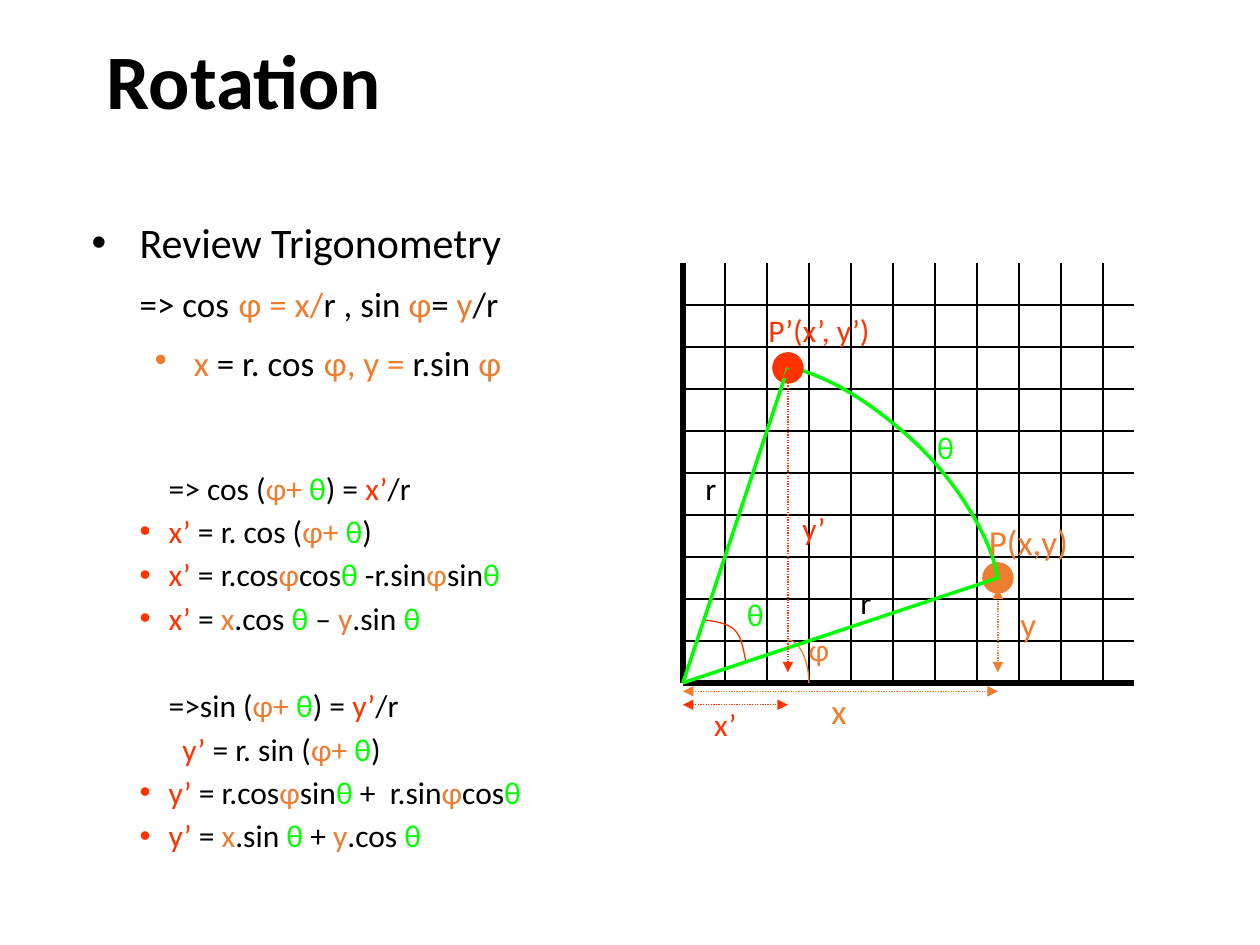
from pptx import Presentation
from pptx.dml.color import RGBColor
from pptx.enum.dml import MSO_LINE
from pptx.enum.shapes import MSO_CONNECTOR, MSO_SHAPE
from pptx.enum.text import MSO_ANCHOR
from pptx.oxml.ns import qn
from pptx.util import Inches, Pt
from lxml.etree import SubElement

THEME = {
    "font": "Calibri",
    "black": "000000", "orange": "ED7D31", "green": "00FF00", "red": "FF3300",
    "title": 44, "head": 24, "body": 20, "small": 18,
    "thin": 0.75, "bold": 2, "axis": 3,
}

PHI, THETA = ("orange", "φ"), ("green", "θ")
X, Y = ("orange", "x"), ("orange", "y")
NEWX, NEWY = ("red", "x’"), ("red", "y’")
SUM = [("orange", "φ+ "), THETA]
GAP = ("black", " ", "head")


def ink(text):
    return ("black", text)


TITLE = [(0, 0, False, 0, [ink("Rotation")])]
REVIEW = [
    (0.38, -0.38, True, 4.8, [("black", "Review Trigonometry", "head")]),
    (0.38, 0, False, 4.8, [ink("=> cos"), GAP, ("orange", "φ = x/"), ink("r , sin "),
                           PHI, ink("= "), Y, ink("/r")]),
    (0.81, -0.31, True, 4.8, [X, ink(" = r. cos"), GAP, ("orange", "φ, y = "),
                              ink("r.sin "), PHI]),
]
PROOF = [
    (0.5, 0, False, 3.2, [ink("=> cos ("), *SUM, ink(") = "), NEWX, ink("/r")]),
    (0.5, -0.23, True, 3.2, [NEWX, ink(" = r. cos ("), *SUM, ink(")")]),
    (0.5, -0.23, True, 3.2, [NEWX, ink(" = r.cos"), PHI, ink("cos"), THETA,
                             ink(" -r.sin"), PHI, ink("sin"), THETA]),
    (0.5, -0.23, True, 3.2, [("red", "x’ "), ink("= "), X, ink(".cos "), THETA,
                             ink(" – "), Y, ink(".sin "), THETA]),
    (0.5, 0, False, 28.3, [ink("=>sin ("), *SUM, ink(") = "), NEWY, ink("/r")]),
    (0.61, 0, False, 3.2, [NEWY, ink(" = r. sin ("), *SUM, ink(")")]),
    (0.5, -0.23, True, 3.2, [NEWY, ink(" = r.cos"), PHI, ink("sin"), THETA,
                             ink(" +  r.sin"), PHI, ink("cos"), THETA]),
    (0.5, -0.23, True, 3.2, [("red", "y’ "), ink("= "), X, ink(".sin "), THETA,
                             ink(" + "), Y, ink(".cos "), THETA]),
]
BLOCKS = [
    (0.75, 0, 8.5, 1.25, "title", TITLE),
    (0.63, 1.67, 4.83, 1.75, "body", REVIEW),
    (0.74, 3.67, 4.63, 3.4, "small", PROOF),
]
LABELS = [
    (7.34, 3.35, 0.33, "small", THETA),
    (6.32, 4.95, 0.46, "small", PHI),
    (7.75, 4.08, 0.9, "body", ("orange", "P(x,y)")),
    (6.5, 5.42, 0.34, "body", X),
    (8, 4.73, 0.34, "body", Y),
    (6.73, 4.58, 0.35, "small", ink("r")),
    (5.57, 5.55, 0.41, "small", NEWX),
    (6.27, 3.99, 0.56, "small", NEWY),
    (5.83, 4.67, 0.33, "small", THETA),
    (6, 2.42, 1.15, "small", ("red", "P’(x’, y’)")),
    (5.5, 3.67, 0.35, "small", ink("r")),
]

LEFT, BASE, STEP = 5.42, 5.42, 1 / 3
COLS, ROWS, WIDE, HIGH = 10, 9, 10.75, 10
ZERO, START, END = (0, 0), (7.5, 2.5), (2.5, 7.5)
RAYS = [(ZERO, START), (ZERO, END)]
SPANS = [
    ((7.5, 2.25), (7.5, 0.25), "orange"),
    ((0, -0.2), (7.5, -0.2), "orange"),
    (END, (2.5, 0.25), "red"),
    ((0, -0.52), (2.5, -0.52), "red"),
]
SWEEP = [(7.92, 4.6), (7.89, 4.31), (7.6, 3.82), (7.25, 3.5),
         (6.9, 3.18), (6.58, 2.99), (6.26, 2.91)]
ARCS = [
    ([(6.25, 5.08), (6.34, 5.08), (6.42, 5.23), (6.42, 5.42)], "orange"),
    ([(5.92, 5.25), (5.9, 5.16), (5.89, 5.06), (5.83, 5),
      (5.78, 4.95), (5.68, 4.93), (5.58, 4.92)], "red"),
]

deck = Presentation()
deck.slide_width, deck.slide_height = Inches(10), Inches(7.5)
slide = deck.slides.add_slide(deck.slide_layouts[6])
shapes = slide.shapes


def tint(name):
    return RGBColor.from_string(THEME[name])


def place(spot):
    return Inches(LEFT + spot[0] * STEP), Inches(BASE - spot[1] * STEP)


def tip(line, *ends):
    for end in ends:
        SubElement(line.line._get_or_add_ln(), qn(f"a:{end}"), type="triangle")


def stroke(shape, color, width):
    shape.line.color.rgb = tint(color)
    shape.line.width = Pt(THEME[width])


def join(start, end, color, width):
    line = shapes.add_connector(MSO_CONNECTOR.STRAIGHT, *place(start), *place(end))
    stroke(line, color, width)
    SubElement(line._element.spPr, qn("a:effectLst"))
    return line


def curve(knots, color, width):
    spots = []
    for i in range(0, len(knots) - 1, 3):
        for n in range(1, 17):
            t = n / 16
            s = 1 - t
            parts = (s**3, 3 * s * s * t, 3 * s * t * t, t**3)
            spots.append(tuple(Inches(sum(w * k[a] for w, k in zip(parts, knots[i:i + 4])))
                               for a in (0, 1)))
    path = shapes.build_freeform(Inches(knots[0][0]), Inches(knots[0][1]))
    path.add_line_segments(spots, close=False)
    shape = path.convert_to_shape()
    shape.shadow.inherit = False
    shape.fill.background()
    stroke(shape, color, width)
    return shape


def dot(spot, color):
    x, y = place(spot)
    size = Inches(0.25)
    shape = shapes.add_shape(MSO_SHAPE.OVAL, x - size // 2, y - size // 2, size, size)
    shape.shadow.inherit = False
    shape.fill.solid()
    shape.fill.fore_color.rgb = tint(color)
    shape.line.fill.background()


def write(x, y, wide, high, size, paras):
    frame = shapes.add_textbox(*map(Inches, (x, y, wide, high))).text_frame
    frame.word_wrap = True
    if size == "title":
        frame.vertical_anchor = MSO_ANCHOR.MIDDLE
    for i, (left, hang, mark, above, runs) in enumerate(paras):
        para = frame.add_paragraph() if i else frame.paragraphs[0]
        para.space_before = Pt(above)
        props = para._p.get_or_add_pPr()
        props.set("marL", str(Inches(left)))
        props.set("indent", str(Inches(hang)))
        if mark:
            SubElement(props, qn("a:buFont"), typeface="Arial")
            SubElement(props, qn("a:buChar"), char="•")
        for color, text, *own in runs:
            run = para.add_run()
            run.text = text
            run.font.name = THEME["font"]
            run.font.size = Pt(THEME[own[0] if own else size])
            run.font.bold = size == "title"
            run.font.color.rgb = tint(color)


for block in BLOCKS:
    write(*block)
for col in range(COLS + 1):
    join((col, HIGH), (col, 0), "black", "thin" if col else "axis")
for row in range(ROWS + 1):
    join((0, row), (WIDE, row), "black", "thin" if row else "axis")

dot(START, "orange")
tip(curve(SWEEP, "green", "bold"), "tailEnd")
dot(END, "red")
for knots, color in ARCS:
    curve(knots, color, "thin")
for start, end in RAYS:
    join(start, end, "green", "bold")
for start, end, color in SPANS:
    line = join(start, end, color, "thin")
    line.line.dash_style = MSO_LINE.ROUND_DOT
    tip(line, "headEnd", "tailEnd")
for x, y, wide, size, run in LABELS:
    write(x, y, wide, 0.4, size, [(0, 0, False, 0, [run])])

deck.save("out.pptx")
